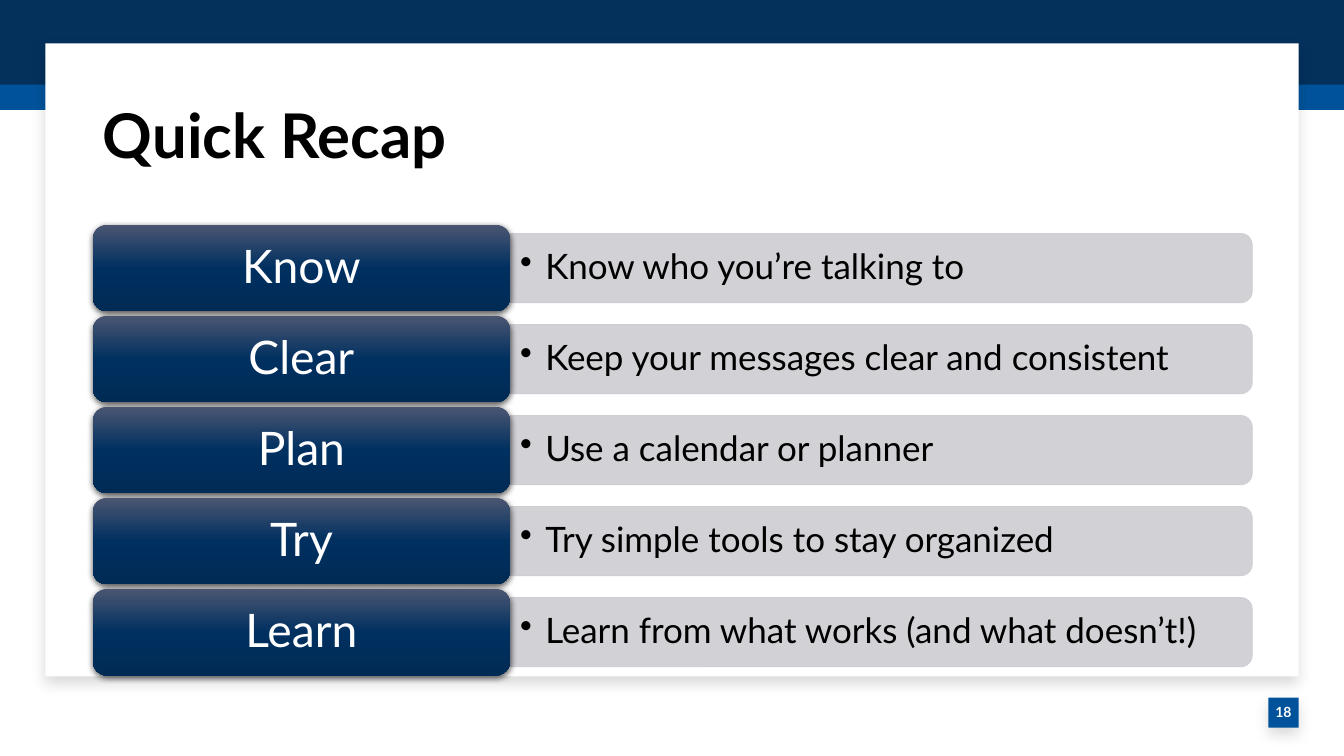
from dataclasses import dataclass

from pptx import Presentation
from pptx.dml.color import RGBColor
from pptx.enum.shapes import MSO_SHAPE as Preset
from pptx.enum.text import MSO_ANCHOR as Anchor, PP_ALIGN as Align
from pptx.oxml import parse_xml
from pptx.oxml.ns import nsdecls, qn
from pptx.util import Inches, Pt

# Content
TITLE = "Quick Recap"
PAGE_NUMBER = "18"
RECAP = [
    ("Know", "Know who you’re talking to"),
    ("Clear", "Keep your messages clear and consistent"),
    ("Plan", "Use a calendar or planner"),
    ("Try", "Try simple tools to stay organized"),
    ("Learn", "Learn from what works (and what doesn’t!)"),
]


@dataclass(frozen=True)
class Theme:
    font: str = "Lato"
    navy: str = "04305C"
    blue: str = "00539B"
    white: str = "FFFFFF"
    black: str = "000000"
    bar: str = "CCCDD2"
    label_gradient: tuple = ((0, "4B5672"), (50, "003060"), (100, "002B55"))
    # Shadows: opacity %, blur pt, distance pt
    soft_shadow: tuple = (15, 10, 5)
    tight_shadow: tuple = (63, 4.5, 1.5)
    title_size: int = 44
    label_size: int = 33
    detail_size: int = 25
    number_size: int = 10


THEME = Theme()

# Grid, in inches
SLIDE_W, SLIDE_H = 13.33, 7.5
MARGIN = 0.45
CARD_TOP, CARD_H = 0.43, 6.28
BADGE, BADGE_TOP = 0.3, 6.92
LEFT, CONTENT_W = 0.92, 11.5
LABEL_W = CONTENT_W * 0.36
BAR_W = CONTENT_W - LABEL_W
FIRST_ROW, ROW_H = 2.23, 0.86
ROW_STEP = ROW_H * 1.05
BAR_H = ROW_H * 0.8


def add_shape(slide, preset, box, color):
    shape = slide.shapes.add_shape(preset, *map(Inches, box))
    shape.shadow.inherit = False
    shape.fill.solid()
    shape.fill.fore_color.rgb = RGBColor.from_string(color)
    shape.line.fill.background()
    return shape


def add_shadow(shape, opacity, blur, distance):
    effects = shape.element.spPr.find(qn("a:effectLst"))
    effects.append(parse_xml(
        f'<a:outerShdw {nsdecls("a")} blurRad="{Pt(blur)}" dist="{Pt(distance)}" '
        f'dir="5400000" algn="t" rotWithShape="0"><a:srgbClr val="{THEME.black}">'
        f'<a:alpha val="{opacity * 1000}"/></a:srgbClr></a:outerShdw>'))


def set_gradient(shape, stops):
    stop_xml = "".join(
        f'<a:gs pos="{position * 1000}"><a:srgbClr val="{color}"/></a:gs>'
        for position, color in stops)
    solid = shape.element.spPr.find(qn("a:solidFill"))
    solid.getparent().replace(solid, parse_xml(
        f'<a:gradFill {nsdecls("a")} rotWithShape="1"><a:gsLst>{stop_xml}</a:gsLst>'
        f'<a:lin ang="5400000" scaled="0"/></a:gradFill>'))


def set_text(shape, text, size, color, align=Align.LEFT, bold=False,
             insets=(0.1, 0.05), bullet=False):
    frame = shape.text_frame
    frame.word_wrap = True
    frame.vertical_anchor = Anchor.MIDDLE
    frame.margin_left = frame.margin_right = Inches(insets[0])
    frame.margin_top = frame.margin_bottom = Inches(insets[1])
    frame.text = text
    paragraph = frame.paragraphs[0]
    paragraph.alignment = align
    paragraph.line_spacing = 0.9
    if bullet:
        properties = paragraph._p.get_or_add_pPr()
        properties.set("marL", str(Inches(0.25)))
        properties.set("indent", str(-Inches(0.25)))
        properties.append(parse_xml(f'<a:buChar {nsdecls("a")} char="•"/>'))
    font = paragraph.runs[0].font
    font.name, font.size, font.bold = THEME.font, Pt(size), bold
    font.color.rgb = RGBColor.from_string(color)


def add_frame(slide):
    add_shape(slide, Preset.RECTANGLE, (0, 0.59, SLIDE_W, 0.5), THEME.blue)
    add_shape(slide, Preset.RECTANGLE, (0, 0, SLIDE_W, 0.84), THEME.navy)
    card = add_shape(slide, Preset.RECTANGLE,
                     (MARGIN, CARD_TOP, SLIDE_W - 2 * MARGIN, CARD_H), THEME.white)
    badge = add_shape(slide, Preset.RECTANGLE,
                      (SLIDE_W - MARGIN - BADGE, BADGE_TOP, BADGE, BADGE), THEME.blue)
    for shape in (card, badge):
        add_shadow(shape, *THEME.soft_shadow)
    set_text(badge, PAGE_NUMBER, THEME.number_size, THEME.white,
             Align.CENTER, bold=True, insets=(0, 0))


def place_title(slide):
    title = slide.shapes.title
    title.left, title.top, title.width, title.height = map(
        Inches, (LEFT, 0.65, CONTENT_W, 1.45))
    set_text(title, TITLE, THEME.title_size, THEME.black, bold=True)
    # Bring the title in front of the card
    title.element.getparent().append(title.element)


def add_recap_row(slide, top, label_text, detail_text):
    middle = top + ROW_H / 2
    bar_left = LEFT + LABEL_W

    # Grey bar: an upright tab turned a quarter, so its right end is rounded
    bar = add_shape(slide, Preset.ROUND_2_SAME_RECTANGLE,
                    (bar_left + (BAR_W - BAR_H) / 2, middle - BAR_W / 2, BAR_H, BAR_W),
                    THEME.bar)
    bar.rotation = 90
    bar.line.color.rgb = RGBColor.from_string(THEME.bar)
    bar.line.width = Pt(0.5)
    for color in bar.element.spPr.iter(qn("a:srgbClr")):
        color.append(parse_xml(f'<a:alpha {nsdecls("a")} val="90000"/>'))

    detail = slide.shapes.add_textbox(
        *map(Inches, (bar_left, middle - BAR_H / 2, BAR_W, BAR_H)))
    set_text(detail, detail_text, THEME.detail_size, THEME.black, bullet=True)

    # Navy label
    label = add_shape(slide, Preset.ROUNDED_RECTANGLE,
                      (LEFT, top, LABEL_W, ROW_H), THEME.navy)
    set_gradient(label, THEME.label_gradient)
    add_shadow(label, *THEME.tight_shadow)
    set_text(label, label_text, THEME.label_size, THEME.white, Align.CENTER)


def main():
    presentation = Presentation()
    presentation.slide_width, presentation.slide_height = Inches(SLIDE_W), Inches(SLIDE_H)
    slide = presentation.slides.add_slide(
        presentation.slide_layouts.get_by_name("Title Only"))
    add_frame(slide)
    place_title(slide)
    for row, (label_text, detail_text) in enumerate(RECAP):
        add_recap_row(slide, FIRST_ROW + row * ROW_STEP, label_text, detail_text)
    presentation.save("out.pptx")


if __name__ == "__main__":
    main()
